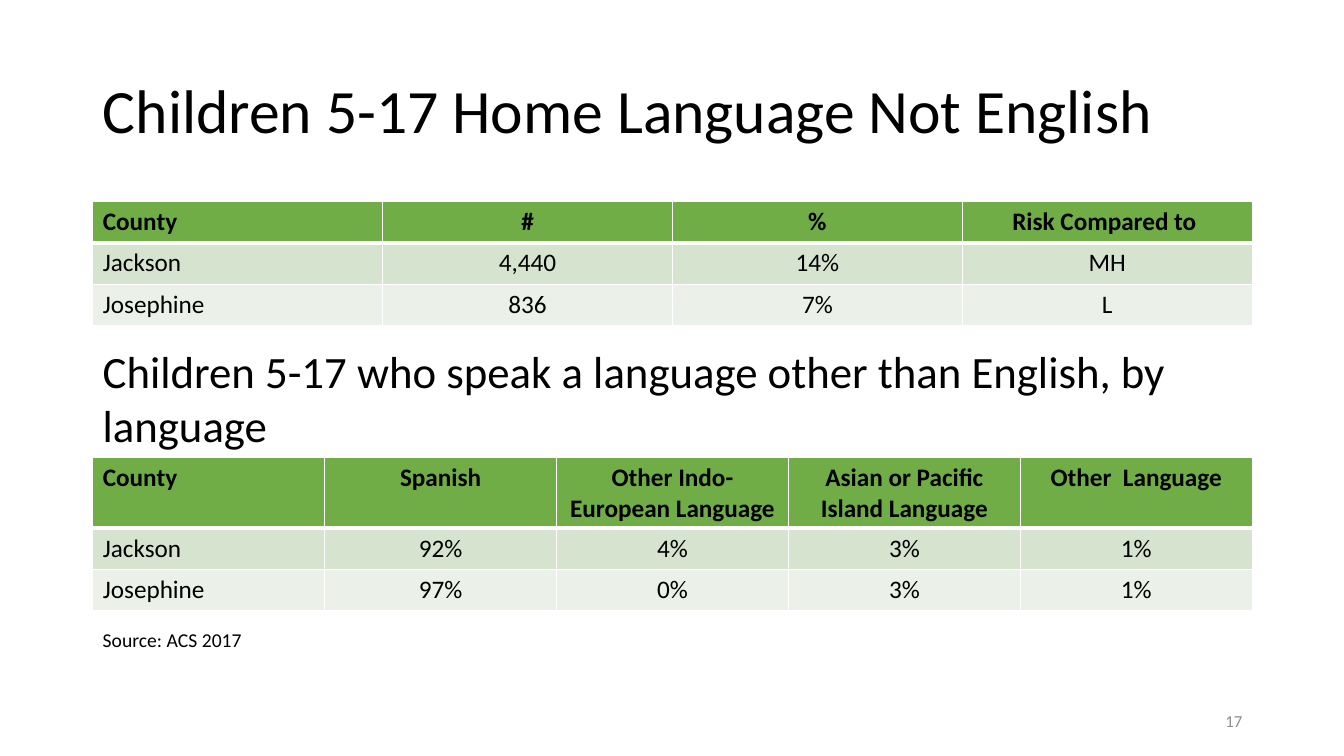
from dataclasses import dataclass

from lxml.etree import SubElement
from pptx import Presentation
from pptx.dml.color import RGBColor
from pptx.enum.text import MSO_ANCHOR as Anchor, PP_ALIGN as Align
from pptx.oxml.ns import qn
from pptx.util import Inches, Pt


@dataclass(frozen=True)
class Theme:
    font: str = "Calibri"
    text: str = "000000"
    muted: str = "8C8C8C"
    border: str = "FFFFFF"
    header: str = "70AD47"
    bands: tuple = ("D5E3CF", "EBF1E9")
    title_size: int = 44
    subtitle_size: int = 32
    table_size: int = 18
    source_size: int = 14
    number_size: int = 12


THEME = Theme()
LEFT, WIDTH = 0.92, 11.5
ROW_HEIGHT = 0.41

LANGUAGE_RISK = [
    ["County", "#", "%", "Risk Compared to "],
    ["Jackson", "4,440", "14%", "MH"],
    ["Josephine", "836", "7%", "L"],
]
LANGUAGE_SHARES = [
    ["County", "Spanish", "Other Indo-European Language",
     "Asian or Pacific Island Language", "Other  Language"],
    ["Jackson", "92%", "4%", "3%", "1%"],
    ["Josephine", "97%", "0%", "3%", "1%"],
]


def write(frame, text, size, color=THEME.text, bold=False, align=Align.LEFT,
          spacing=None):
    """Put one formatted paragraph into a text frame."""
    frame.word_wrap = True
    paragraph = frame.paragraphs[0]
    paragraph.alignment = align
    paragraph.line_spacing = spacing
    run = paragraph.add_run()
    run.text = text
    run.font.name = THEME.font
    run.font.size = Pt(size)
    run.font.bold = bold
    run.font.color.rgb = RGBColor.from_string(color)


def add_title(slide, text):
    title = slide.shapes.title
    title.left, title.top = Inches(LEFT), Inches(0.4)
    title.width, title.height = Inches(WIDTH), Inches(1.45)
    title.text_frame.vertical_anchor = Anchor.MIDDLE
    write(title.text_frame, text, THEME.title_size, spacing=0.9)


def add_label(slide, text, left, top, width, height, anchor=Anchor.TOP, **style):
    box = slide.shapes.add_textbox(
        Inches(left), Inches(top), Inches(width), Inches(height))
    box.text_frame.vertical_anchor = anchor
    write(box.text_frame, text, **style)


def set_borders(cell, **widths):
    """Draw cell sides, given as L, R, T and B widths in points."""
    properties = cell._tc.get_or_add_tcPr()
    for side, width in widths.items():
        line = SubElement(properties, qn(f"a:ln{side}"), w=str(Pt(width)))
        fill = SubElement(line, qn("a:solidFill"))
        SubElement(fill, qn("a:srgbClr"), val=THEME.border)


def add_county_table(slide, rows, top, header_height=ROW_HEIGHT):
    heights = [header_height] + [ROW_HEIGHT] * (len(rows) - 1)
    columns = len(rows[0])
    table = slide.shapes.add_table(
        len(rows), columns, Inches(LEFT), Inches(top),
        Inches(WIDTH), Inches(sum(heights))).table
    for column in table.columns:
        column.width = Inches(WIDTH / columns)

    for r, values in enumerate(rows):
        table.rows[r].height = Inches(heights[r])
        is_header = r == 0
        color = THEME.header if is_header else THEME.bands[(r - 1) % 2]
        for c, value in enumerate(values):
            cell = table.cell(r, c)
            # The rule under the header is heavier than the other borders
            set_borders(cell, L=1, R=1, T=3 if r == 1 else 1,
                        B=3 if is_header else 1)
            cell.fill.solid()
            cell.fill.fore_color.rgb = RGBColor.from_string(color)
            write(cell.text_frame, value, THEME.table_size, bold=is_header,
                  align=Align.CENTER if c else Align.LEFT)


def main():
    deck = Presentation()
    deck.slide_width, deck.slide_height = Inches(13.33), Inches(7.5)
    slide = deck.slides.add_slide(deck.slide_layouts[5])

    # Children whose home language is not English
    add_title(slide, "Children 5-17 Home Language Not English")
    add_county_table(slide, LANGUAGE_RISK, top=2)

    # Breakdown by language
    add_label(slide,
              "Children 5-17 who speak a language other than English, by language",
              LEFT, 3.36, WIDTH, 1.18, size=THEME.subtitle_size)
    add_county_table(slide, LANGUAGE_SHARES, top=4.54, header_height=0.69)

    # Source and slide number
    add_label(slide, "Source: ACS 2017", LEFT, 6.18, 7.92, 0.34,
              size=THEME.source_size)
    add_label(slide, "17", 9.42, 6.95, 3, 0.4, anchor=Anchor.MIDDLE,
              size=THEME.number_size, color=THEME.muted, align=Align.RIGHT)

    deck.save("out.pptx")


if __name__ == "__main__":
    main()
